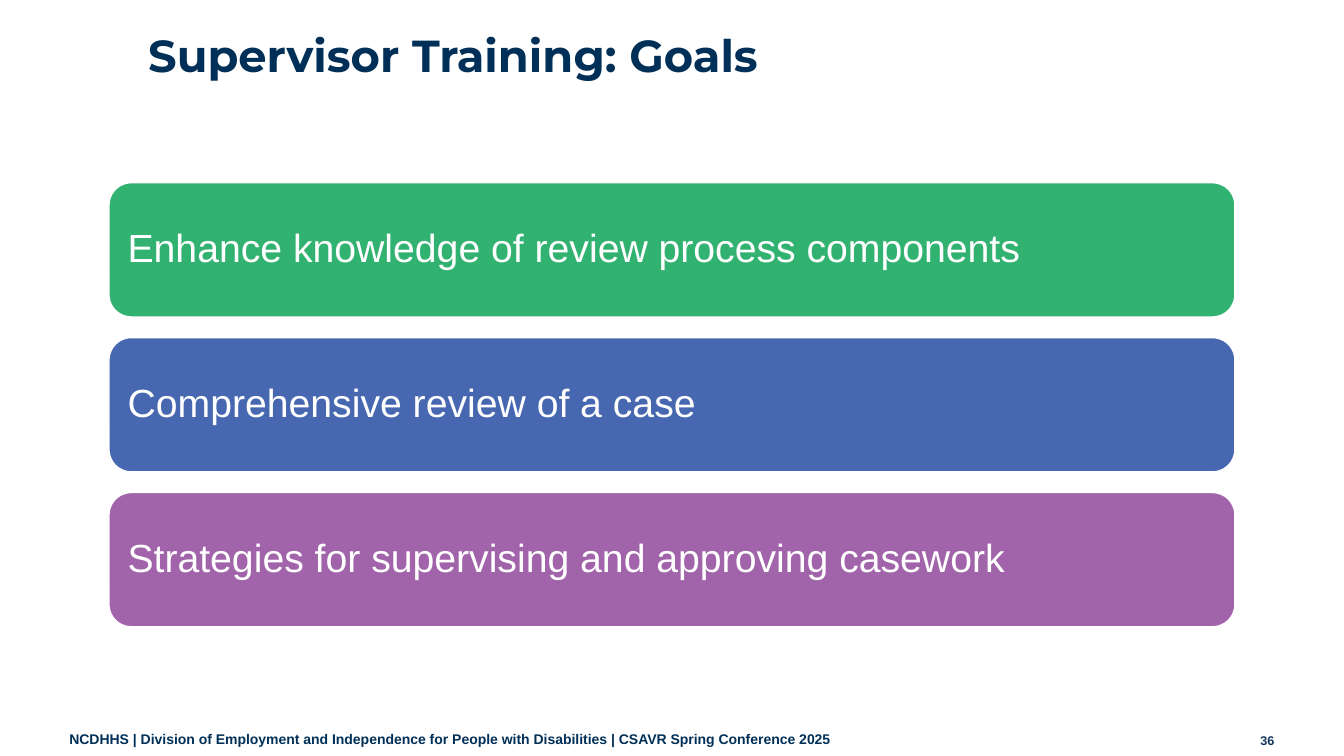
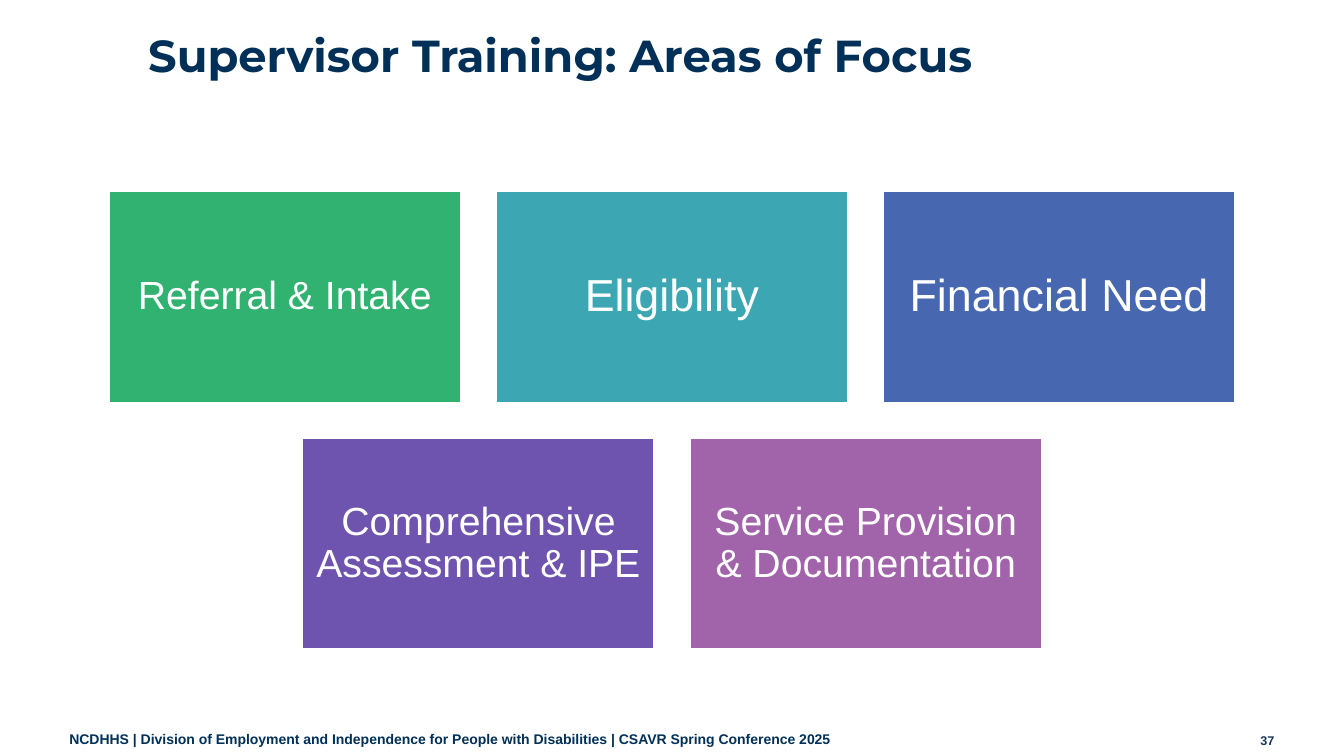
"""Build two supervisor training slides: goals and areas of focus."""
from dataclasses import dataclass

import pptx
import pptx.dml.color
import pptx.enum.shapes
import pptx.enum.text
import pptx.util

Pt = pptx.util.Pt
Align = pptx.enum.text.PP_ALIGN
Anchor = pptx.enum.text.MSO_ANCHOR
Preset = pptx.enum.shapes.MSO_SHAPE

COLORS = {
    "navy": "003057",
    "number": "15365E",
    "white": "FFFFFF",
    "green": "32B271",
    "teal": "3CA7B2",
    "blue": "4768B1",
    "violet": "6E54AE",
    "purple": "A163A9",
}
FOOTER = (
    "NCDHHS | Division of Employment and Independence for People with Disabilities"
    " | CSAVR Spring Conference 2025"
)
SLIDE_WIDTH, SLIDE_HEIGHT = 960, 540
CONTENT_WIDTH = 804.24


@dataclass(frozen=True)
class Area:
    left: float
    top: float
    width: float
    height: float

    def lengths(self) -> tuple:
        return Pt(self.left), Pt(self.top), Pt(self.width), Pt(self.height)


@dataclass(frozen=True)
class Style:
    size: float
    color: str
    font: str = "Arial"
    bold: bool = False
    align: Align = Align.LEFT
    spacing: float = 1.0


@dataclass(frozen=True)
class Card:
    text: str
    color: str
    size: float = 28
    inset: float = 8.64


TITLE_AREA = Area(98.64, 21.6, 783.36, 39.6)
FOOTER_AREA = Area(42.48, 518.4, 847.44, 20.88)
NUMBER_AREA = Area(874.8, 519.84, 42.48, 21.6)
TITLE_STYLE = Style(32, "navy", "Montserrat", bold=True, spacing=0.9)
FOOTER_STYLE = Style(10, "navy", bold=True)
NUMBER_STYLE = Style(9, "number", bold=True, align=Align.RIGHT)

GOALS = [
    Card("Enhance knowledge of review process components", "green"),
    Card("Comprehensive review of a case", "blue"),
    Card("Strategies for supervising and approving casework", "purple"),
]
FOCUS_ROWS = [
    [
        Card("Referral & Intake", "green"),
        Card("Eligibility", "teal", 32, 9.6),
        Card("Financial Need", "blue", 32, 9.6),
    ],
    [
        Card("Comprehensive Assessment & IPE", "violet"),
        Card("Service Provision & Documentation", "purple"),
    ],
]


def rgb(name: str) -> pptx.dml.color.RGBColor:
    """Return the named palette colour."""
    return pptx.dml.color.RGBColor.from_string(COLORS[name])


def write(box, text: str, style: Style, anchor: Anchor = Anchor.TOP) -> None:
    """Write one styled paragraph into a shape."""
    frame = box.text_frame
    frame.word_wrap = True
    frame.auto_size = pptx.enum.text.MSO_AUTO_SIZE.NONE
    frame.vertical_anchor = anchor
    para = frame.paragraphs[0]
    para.alignment = style.align
    para.line_spacing = style.spacing
    span = para.add_run()
    span.text = text
    span.font.name = style.font
    span.font.size = Pt(style.size)
    span.font.bold = style.bold
    span.font.color.rgb = rgb(style.color)


def add_page(deck, title: str, number: int):
    """Add a slide with its title, footer and page number."""
    page = deck.slides.add_slide(deck.slide_layouts[5])
    box = page.shapes.title
    box.left, box.top, box.width, box.height = TITLE_AREA.lengths()
    write(box, title, TITLE_STYLE, Anchor.MIDDLE)
    write(page.shapes.add_textbox(*FOOTER_AREA.lengths()), FOOTER, FOOTER_STYLE)
    write(page.shapes.add_textbox(*NUMBER_AREA.lengths()), str(number), NUMBER_STYLE)
    return page


def add_card(page, preset: Preset, card: Card, area: Area, align: Align) -> None:
    """Draw a filled card with its label."""
    box = page.shapes.add_shape(preset, *area.lengths())
    box.shadow.inherit = False
    box.fill.solid()
    box.fill.fore_color.rgb = rgb(card.color)
    box.line.color.rgb = rgb("white")
    box.line.width = Pt(1)
    frame = box.text_frame
    frame.margin_left = frame.margin_right = Pt(card.inset)
    frame.margin_top = frame.margin_bottom = Pt(card.inset)
    write(box, card.text, Style(card.size, "white", align=align, spacing=0.9), Anchor.MIDDLE)


def add_goals(page) -> None:
    """Stack the goals as full-width rounded bars."""
    left, top, height, gap = (SLIDE_WIDTH - CONTENT_WIDTH) / 2, 130.5, 95.9, 14.75
    for index, card in enumerate(GOALS):
        area = Area(left, top + index * (height + gap), CONTENT_WIDTH, height)
        add_card(page, Preset.ROUNDED_RECTANGLE, card, area, Align.LEFT)


def add_focus_areas(page) -> None:
    """Lay out the focus areas in centred rows."""
    top, height, gap = 136.8, 150.6, 25.6
    width = (CONTENT_WIDTH - 2 * gap) / 3
    for row, cards in enumerate(FOCUS_ROWS):
        row_width = len(cards) * (width + gap) - gap
        left = (SLIDE_WIDTH - row_width) / 2
        for column, card in enumerate(cards):
            area = Area(
                left + column * (width + gap), top + row * (height + gap), width, height
            )
            add_card(page, Preset.RECTANGLE, card, area, Align.CENTER)


def main() -> None:
    """Build and save the deck."""
    deck = pptx.Presentation()
    deck.slide_width, deck.slide_height = Pt(SLIDE_WIDTH), Pt(SLIDE_HEIGHT)
    add_goals(add_page(deck, "Supervisor Training: Goals", 36))
    add_focus_areas(add_page(deck, "Supervisor Training: Areas of Focus", 37))
    deck.save("out.pptx")


if __name__ == "__main__":
    main()
